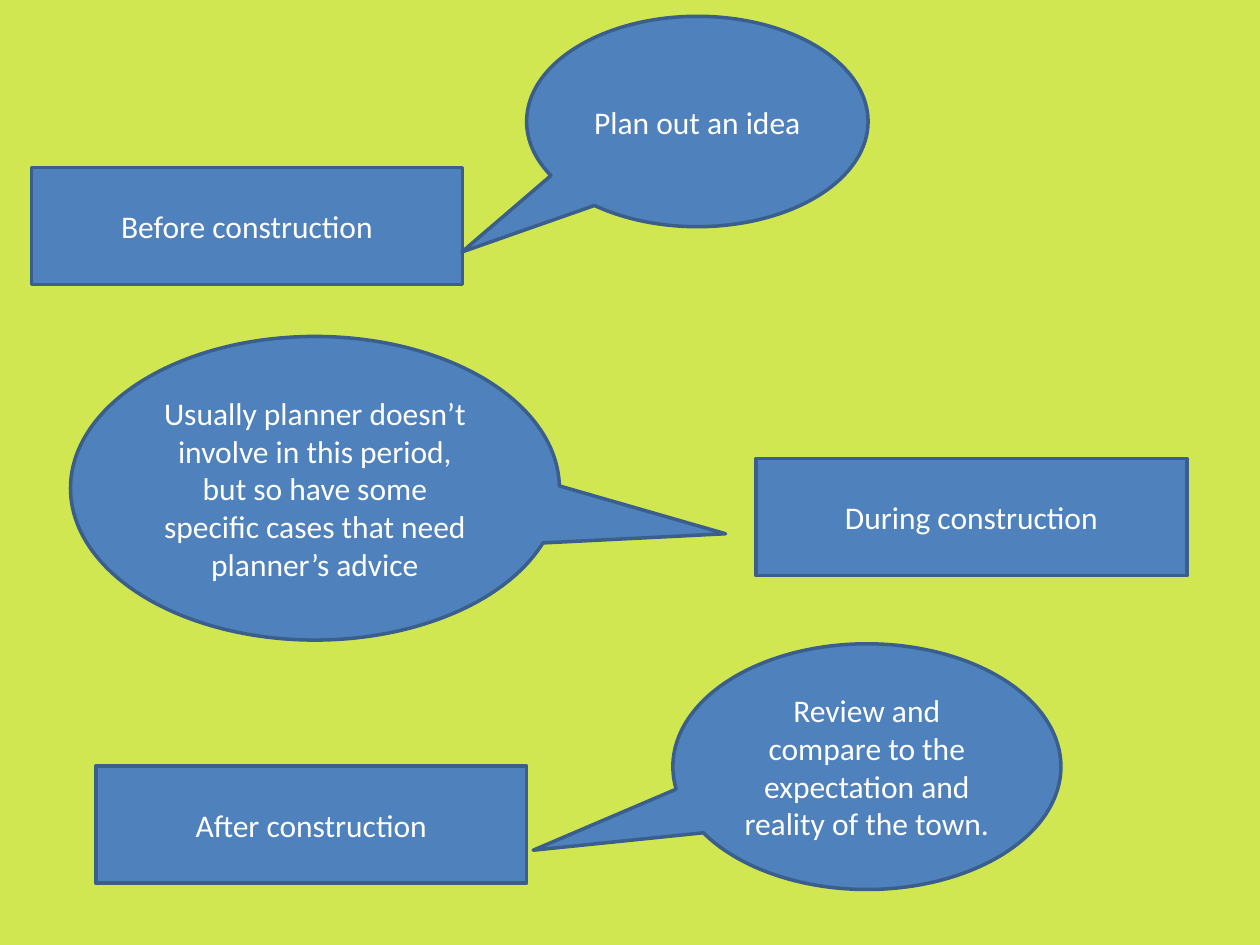
"""Build a slide of three construction stages, each with a callout on the planner's role."""
from dataclasses import dataclass

import pptx
import pptx.dml.color
import pptx.enum.shapes
import pptx.enum.text
import pptx.slide
import pptx.util

Inches = pptx.util.Inches
Kind = pptx.enum.shapes.MSO_SHAPE

COLORS = {"background": "D1E751", "fill": "4F81BD", "line": "3A5F8C", "text": "FFFFFF"}
FONT_FORMAT = {"name": "Calibri", "size": pptx.util.Pt(18)}
FRAME_FORMAT = {"word_wrap": True, "vertical_anchor": pptx.enum.text.MSO_ANCHOR.MIDDLE}
STAGE_SIZE = (3.42, 0.93)


@dataclass(frozen=True)
class Bubble:
    text: str
    left: float
    top: float
    width: float
    height: float
    tail: tuple[float, float]


@dataclass(frozen=True)
class Stage:
    text: str
    left: float
    top: float
    bubble: Bubble


STAGES = [
    Stage("Before construction", 0.25, 1.33,
          Bubble("Plan out an idea", 4.18, 0.13, 2.71, 1.67, (-0.69, 0.62))),
    Stage("During construction", 6, 3.64,
          Bubble("Usually planner doesn’t involve in this period, but so have some "
                 "specific cases that need planner’s advice",
                 0.56, 2.67, 3.88, 2.41, (0.84, 0.15))),
    Stage("After construction", 0.76, 6.08,
          Bubble("Review and compare to the expectation and reality of the town.",
                 5.34, 5.11, 3.08, 1.95, (-0.86, 0.34))),
]


def color(name: str) -> pptx.dml.color.RGBColor:
    return pptx.dml.color.RGBColor.from_string(COLORS[name])


def apply_format(target: object, values: dict) -> None:
    for name, value in values.items():
        setattr(target, name, value)


def add_box(page: pptx.slide.Slide, kind: Kind, text: str, left: float, top: float,
            width: float, height: float, adjustments: tuple[float, ...] = ()) -> None:
    box = page.shapes.add_shape(kind, Inches(left), Inches(top), Inches(width), Inches(height))
    box.shadow.inherit = False
    for index, value in enumerate(adjustments):
        box.adjustments[index] = value
    box.fill.solid()
    box.fill.fore_color.rgb = color("fill")
    box.line.color.rgb = color("line")
    box.line.width = pptx.util.Pt(2)
    apply_format(box.text_frame, FRAME_FORMAT)
    para = box.text_frame.paragraphs[0]
    para.alignment = pptx.enum.text.PP_ALIGN.CENTER
    span = para.add_run()
    span.text = text
    apply_format(span.font, FONT_FORMAT)
    span.font.color.rgb = color("text")


def add_stage(page: pptx.slide.Slide, stage: Stage) -> None:
    bubble = stage.bubble
    add_box(page, Kind.RECTANGLE, stage.text, stage.left, stage.top, *STAGE_SIZE)
    add_box(page, Kind.OVAL_CALLOUT, bubble.text, bubble.left, bubble.top,
            bubble.width, bubble.height, bubble.tail)


def main() -> None:
    deck = pptx.Presentation()
    deck.slide_width, deck.slide_height = Inches(10), Inches(7.5)
    page = deck.slides.add_slide(deck.slide_layouts.get_by_name("Blank"))
    page.background.fill.solid()
    page.background.fill.fore_color.rgb = color("background")
    for stage in STAGES:
        add_stage(page, stage)
    deck.save("out.pptx")


if __name__ == "__main__":
    main()
